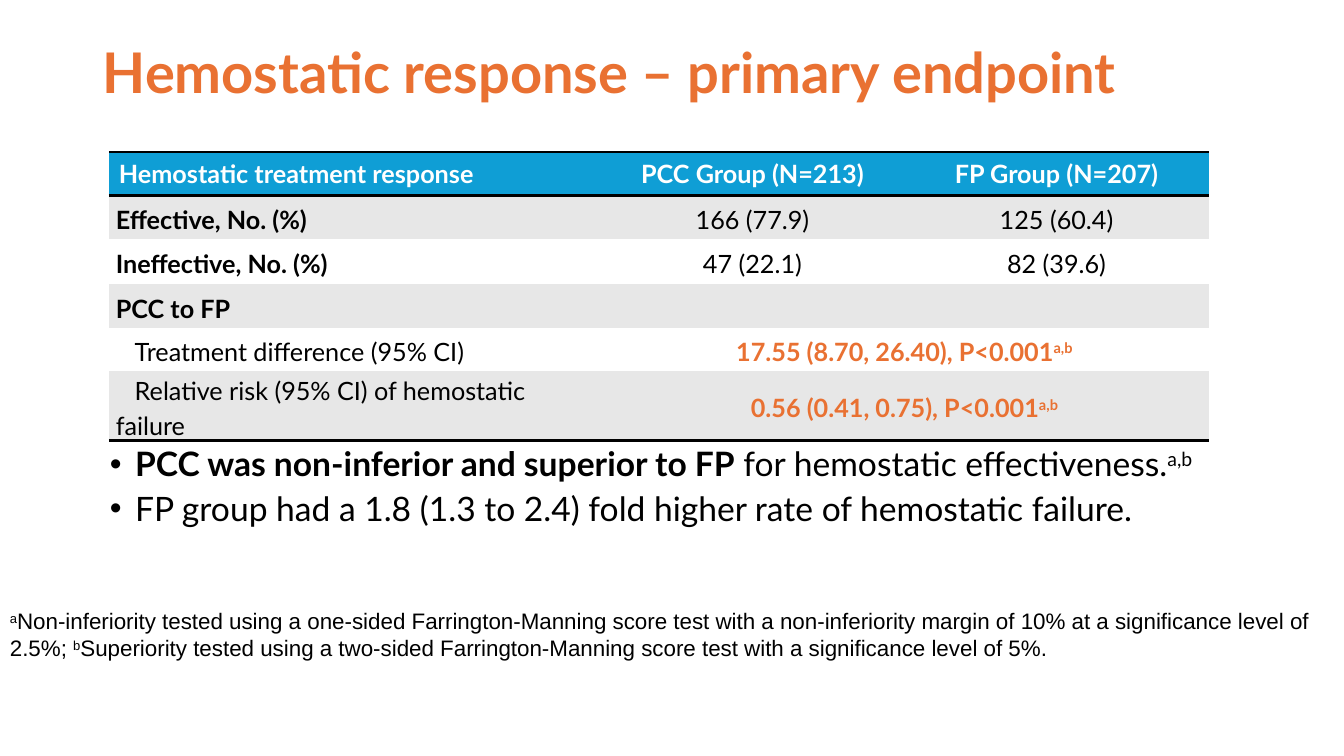
"""Build the slide on the primary endpoint of hemostatic response."""
import pptx
import pptx.dml.color
import pptx.enum.text
import pptx.oxml
import pptx.oxml.ns
import pptx.util

Pt = pptx.util.Pt
ANCHOR = pptx.enum.text.MSO_ANCHOR
ALIGN = pptx.enum.text.PP_ALIGN
ORANGE, BLUE, GREY, WHITE, BLACK = "E97132", "0F9ED5", "E7E7E7", "FFFFFF", "000000"
PLAIN_STYLE = "{2D5ABB26-0587-4C30-8999-92F81FD0307C}"
SUP = "a,b"
ROWS = [
    ("Hemostatic treatment response", "PCC Group (N=213)", "FP Group (N=207)"),
    ("Effective, No. (%)", "166 (77.9)", "125 (60.4)"),
    ("Ineffective, No. (%)", "47 (22.1)", "82 (39.6)"),
    ("PCC to FP", ""),
    ("Treatment difference (95% CI)", "17.55 (8.70, 26.40), P<0.001"),
    ("Relative risk (95% CI) of hemostatic failure", "0.56 (0.41, 0.75), P<0.001"),
]


def rgb(code):
    """Turn a hex string into a colour."""
    return pptx.dml.color.RGBColor.from_string(code)


def add_runs(p, runs, size, color=BLACK, name="Lato"):
    """Add (text, bold, superscript) runs to a paragraph."""
    for text, bold, raised in runs:
        r = p.add_run()
        r.text = text
        r.font.name, r.font.size, r.font.bold = name, Pt(size), bold
        r.font.color.rgb = rgb(color)
        if raised:
            r._r.get_or_add_rPr().set("baseline", "30000")


def place(sp, box):
    """Move a shape to a box given in points."""
    sp.left, sp.top, sp.width, sp.height = map(Pt, box)


def set_frame(tf, anchor):
    """Wrap a text frame, fix its size and anchor it."""
    tf.word_wrap = True
    tf.auto_size = pptx.enum.text.MSO_AUTO_SIZE.NONE
    tf.vertical_anchor = anchor


def add_title(s, box):
    """Fill the title placeholder."""
    sp = s.shapes.title
    place(sp, box)
    set_frame(sp.text_frame, ANCHOR.TOP)
    p = sp.text_frame.paragraphs[0]
    p.alignment, p.line_spacing = ALIGN.LEFT, 0.9
    add_runs(p, [("Hemostatic response – primary endpoint", True, False)], 40, ORANGE)


def add_findings(s, box):
    """Fill the body placeholder with the bulleted findings."""
    sp = s.placeholders[1]
    place(sp, box)
    tf = sp.text_frame
    set_frame(tf, ANCHOR.TOP)
    findings = [
        [("PCC was non-inferior and superior to FP", True, False),
         (" for hemostatic effectiveness.", False, False), (SUP, False, True)],
        [("FP group had a 1.8 (1.3 to 2.4) fold higher rate of hemostatic failure.",
          False, False)],
    ]
    for i, runs in enumerate(findings):
        p = tf.add_paragraph() if i else tf.paragraphs[0]
        pPr = p._p.get_or_add_pPr()
        pPr.set("marL", str(Pt(18)))
        pPr.set("indent", str(-Pt(18)))
        pPr.append(pptx.oxml.parse_xml(
            f'<a:buChar {pptx.oxml.ns.nsdecls("a")} char="•"/>'))
        p.line_spacing, p.space_before, p.space_after = 0.9, Pt(0), Pt(6)
        add_runs(p, runs, 24)


def add_footnote(s, box):
    """Add the footnote on the statistical tests."""
    tf = s.shapes.add_textbox(*map(Pt, box)).text_frame
    set_frame(tf, ANCHOR.BOTTOM)
    add_runs(tf.paragraphs[0], [
        ("a", False, True),
        ("Non-inferiority tested using a one-sided Farrington-Manning score test with a "
         "non-inferiority margin of 10% at a significance level of 2.5%; ", False, False),
        ("b", False, True),
        ("Superiority tested using a two-sided Farrington-Manning score test with a "
         "significance level of 5%.", False, False),
    ], 16, name="Arial")


def add_borders(cell, sides):
    """Draw black rules on the given sides of a cell."""
    for i, side in enumerate(sides):
        cell._tc.get_or_add_tcPr().insert(i, pptx.oxml.parse_xml(
            f'<a:ln{side} {pptx.oxml.ns.nsdecls("a")} w="{Pt(2)}"><a:solidFill>'
            f'<a:srgbClr val="{BLACK}"/></a:solidFill></a:ln{side}>'))


def format_cell(cell, row, col, text):
    """Write and format one table cell by its row and column."""
    header, estimate = row == 0, row > 3
    cell.vertical_anchor = ANCHOR.MIDDLE
    p = cell.text_frame.paragraphs[0]
    p.alignment = ALIGN.CENTER if col else ALIGN.LEFT
    if not header:
        cell.margin_left = cell.margin_right = Pt(5)
        cell.margin_top = cell.margin_bottom = Pt(0)
        p.line_spacing, p.space_after = 1.15, Pt(10)
    if estimate and not col:
        p._p.get_or_add_pPr().set("indent", str(Pt(13.5)))
    color = WHITE if header else ORANGE if estimate and col else BLACK
    bold = header or (col > 0) == estimate
    runs = [(text, bold, False)] if text else []
    if estimate and col:
        runs.append((SUP, bold, True))
    add_runs(p, runs, 18, color)


def add_results(s, box):
    """Add the table of treatment responses."""
    frame = s.shapes.add_table(len(ROWS), 3, *map(Pt, box))
    table = frame.table
    table._tbl.tblPr.find(pptx.oxml.ns.qn("a:tableStyleId")).text = PLAIN_STYLE
    table.horz_banding = False
    group_width = 217.2
    for col, width in zip(table.columns, (box[2] - 2 * group_width, group_width, group_width)):
        col.width = Pt(width)
    for i, texts in enumerate(ROWS):
        table.rows[i].height = Pt(32.4 if i == 2 else 31)
        for j in range(3):
            cell = table.cell(i, j)
            cell.fill.solid()
            cell.fill.fore_color.rgb = rgb(BLUE if i == 0 else GREY if i % 2 else WHITE)
            add_borders(cell, "TB" if i == 0 else "B" if i == len(ROWS) - 1 else "")
        if len(texts) == 2:
            table.cell(i, 1).merge(table.cell(i, 2))
        for j, text in enumerate(texts):
            format_cell(table.cell(i, j), i, j, text)


def main():
    """Build and save the presentation."""
    prs = pptx.Presentation()
    prs.slide_width, prs.slide_height = Pt(960), Pt(540)
    s = prs.slides.add_slide(prs.slide_layouts[1])
    add_title(s, (66.24, 28.8, 828, 104.4))
    add_footnote(s, (0, 429.84, 955.44, 46.08))
    add_results(s, (77.76, 108.72, 785.52, 188.64))
    add_findings(s, (71.28, 316.08, 828, 156.96))
    prs.save("out.pptx")


if __name__ == "__main__":
    main()
